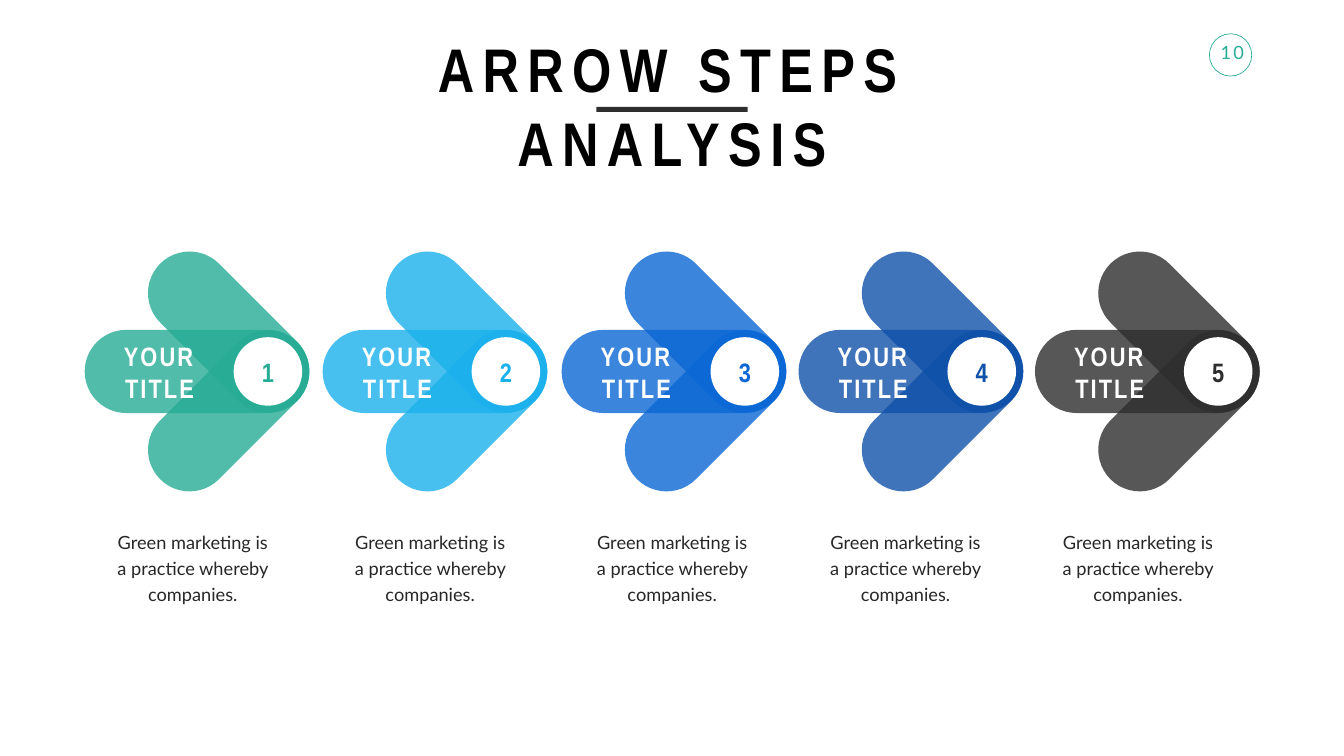
from lxml import etree
from pptx import Presentation
from pptx.dml.color import RGBColor
from pptx.enum.shapes import MSO_SHAPE
from pptx.enum.text import MSO_ANCHOR, MSO_AUTO_SIZE, PP_ALIGN
from pptx.oxml.ns import qn
from pptx.util import Pt

EMU_PER_PX = 9144  # 100 px to the inch

OVAL = MSO_SHAPE.OVAL
RECTANGLE = MSO_SHAPE.RECTANGLE
CAPSULE = MSO_SHAPE.ROUNDED_RECTANGLE
TOP, MIDDLE = MSO_ANCHOR.TOP, MSO_ANCHOR.MIDDLE
CENTER = PP_ALIGN.CENTER
GROW = MSO_AUTO_SIZE.SHAPE_TO_FIT_TEXT

WHITE = RGBColor(0xFF, 0xFF, 0xFF)
BLACK = RGBColor(0x00, 0x00, 0x00)
BODY = RGBColor(0x27, 0x27, 0x27)
GREEN = RGBColor(0x27, 0xAC, 0x95)
SKY = RGBColor(0x1B, 0xB1, 0xEC)
BLUE = RGBColor(0x0A, 0x67, 0xD4)
NAVY = RGBColor(0x0F, 0x51, 0xA9)
CHARCOAL = RGBColor(0x2E, 0x2E, 0x2E)

HEADING_FONT, BODY_FONT = "Arial Narrow", "Lato"

# Arrow left, description left, colour
STEPS = [
    (168, 197, GREEN),
    (640, 668, SKY),
    (1114, 1148, BLUE),
    (1584, 1611, NAVY),
    (2053, 2072, CHARCOAL),
]
STEP_TITLE = "YOUR TITLE"
DESCRIPTION = "Green marketing is a practice whereby companies."

MIDLINE = 737
THICKNESS = 165
SHAFT_LENGTH = 446
ARM_LENGTH = 384
ARM_OFFSET = 78  # from the tip to the centre of an arm, across and down
DISC = 136


def px(value):
    return round(value * EMU_PER_PX)


def add_shape(slide, kind, left, top, width, height, fill=None, line=None):
    shape = slide.shapes.add_shape(kind, px(left), px(top), px(width), px(height))
    shape.shadow.inherit = False
    if fill is None:
        shape.fill.background()
    else:
        shape.fill.solid()
        shape.fill.fore_color.rgb = fill
    if line is None:
        shape.line.fill.background()
    else:
        shape.line.color.rgb = line
        shape.line.width = Pt(1)
    return shape


def add_capsule(slide, center_x, center_y, length, color, rotation=0):
    """Add a translucent bar with fully round ends."""
    capsule = add_shape(slide, CAPSULE, center_x - length / 2, center_y - THICKNESS / 2,
                        length, THICKNESS, color)
    capsule.adjustments[0] = 0.5
    capsule.rotation = rotation
    color_element = capsule.fill.fore_color._xFill.find(qn("a:srgbClr"))
    etree.SubElement(color_element, qn("a:alpha"), val="80000")


def add_text(slide, text, left, top, width, height, size, color,
             font=HEADING_FONT, bold=True, spacing=3, anchor=MIDDLE):
    """Add a centred text box; spacing is the gap between letters in points."""
    box = slide.shapes.add_textbox(px(left), px(top), px(width), px(height))
    frame = box.text_frame
    frame.word_wrap = True
    frame.auto_size = GROW
    frame.vertical_anchor = anchor
    paragraph = frame.paragraphs[0]
    paragraph.alignment = CENTER
    run = paragraph.add_run()
    run.text = text
    run.font.name = font
    run.font.size = Pt(size)
    run.font.bold = bold
    run.font.color.rgb = color
    if spacing:
        run._r.get_or_add_rPr().set("spc", str(spacing * 100))
    return frame


def add_description(slide, left):
    frame = add_text(slide, DESCRIPTION, left, 1035, 371, 174, 26, BODY,
                     BODY_FONT, bold=False, spacing=0, anchor=TOP)
    frame.margin_left = frame.margin_right = px(24)
    frame.margin_top = frame.margin_bottom = px(12)
    paragraph = frame.paragraphs[0]
    paragraph.line_spacing = Pt(37)
    paragraph.space_before = Pt(5)


def add_arrow(slide, number, left, color):
    tip = left + SHAFT_LENGTH - THICKNESS / 2
    add_capsule(slide, left + SHAFT_LENGTH / 2, MIDLINE, SHAFT_LENGTH, color)
    for side in (1, -1):
        add_capsule(slide, tip - ARM_OFFSET, MIDLINE + side * ARM_OFFSET,
                    ARM_LENGTH, color, rotation=-45 * side)
    add_shape(slide, OVAL, tip - DISC / 2, MIDLINE - DISC / 2, DISC, DISC, WHITE)
    add_text(slide, STEP_TITLE, left + 28, 700, 241, 74, 38, WHITE)
    add_text(slide, str(number), left + 341, 700, 45, 74, 38, color)


def add_page_number(slide):
    add_text(slide, "10", 2406, 78, 77, 54, 26, GREEN, BODY_FONT, bold=False, anchor=TOP)
    add_shape(slide, OVAL, 2399, 67, 84, 84, line=GREEN)


def add_heading(slide):
    add_text(slide, "ARROW STEPS ANALYSIS", 707, 56, 1252, 158, 88, BLACK,
             spacing=12, anchor=TOP)
    add_shape(slide, RECTANGLE, 1183, 212, 300, 10, CHARCOAL)


def main():
    presentation = Presentation()
    presentation.slide_width = px(2666)
    presentation.slide_height = px(1500)
    slide = presentation.slides.add_slide(presentation.slide_layouts[6])
    add_page_number(slide)
    for number, (arrow_left, description_left, color) in enumerate(STEPS, start=1):
        add_arrow(slide, number, arrow_left, color)
        add_description(slide, description_left)
    add_heading(slide)
    presentation.save("out.pptx")


if __name__ == "__main__":
    main()
